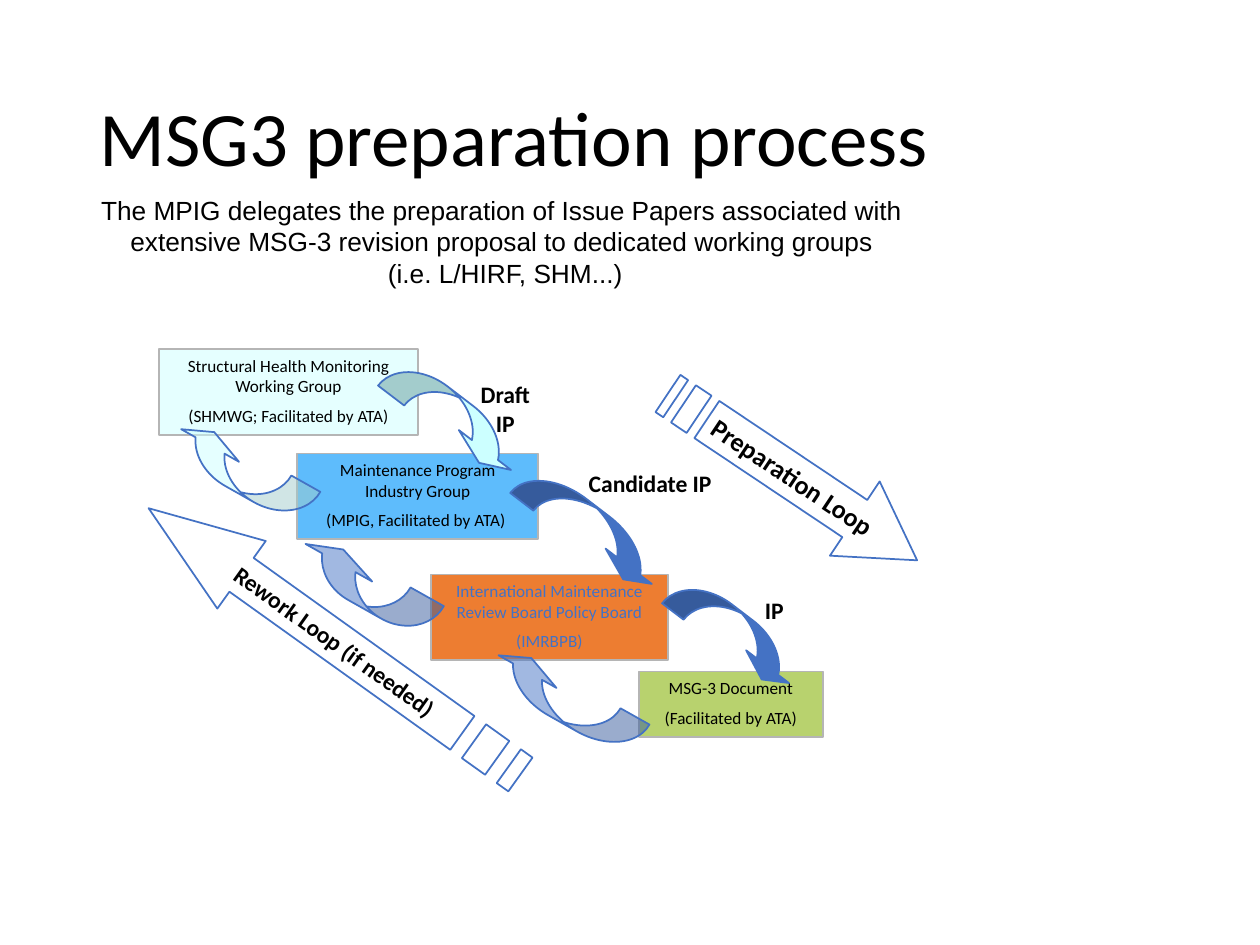
from lxml.etree import SubElement
from pptx import Presentation
from pptx.dml.color import RGBColor
from pptx.enum.shapes import MSO_SHAPE as Shape
from pptx.enum.text import MSO_ANCHOR as Anchor, MSO_AUTO_SIZE as AutoSize, PP_ALIGN as Align
from pptx.oxml.ns import qn
from pptx.util import Inches, Pt

BLACK = RGBColor(0x00, 0x00, 0x00)
BLUE = RGBColor(0x44, 0x72, 0xC4)
SKY = RGBColor(0x5E, 0xBC, 0xFC)
AQUA = RGBColor(0xCC, 0xFF, 0xFF)
ORANGE = RGBColor(0xED, 0x7D, 0x31)
GREEN = RGBColor(0xB8, 0xD2, 0x6E)
GREY = RGBColor(0xB5, 0xB5, 0xB5)

presentation = Presentation()
presentation.slide_width, presentation.slide_height = Inches(10), Inches(7.5)
slide = presentation.slides.add_slide(presentation.slide_layouts[6])
shapes = slide.shapes

# Grid of 100 columns and 75 rows
COLUMN = presentation.slide_width / 100
ROW = presentation.slide_height / 75


def grid(left, top, width, height):
    return [round(n * unit) for n, unit in zip((left, top, width, height), (COLUMN, ROW) * 2)]


def write(shape, lines, size, color=BLACK, bold=False, font="Calibri", align=Align.CENTER,
          gap=0, anchor=Anchor.TOP, wrap=True):
    frame = shape.text_frame
    frame.text = "\n".join(lines)
    frame.word_wrap = wrap
    frame.vertical_anchor = anchor
    frame.auto_size = AutoSize.NONE
    for index, paragraph in enumerate(frame.paragraphs):
        paragraph.alignment = align
        if index and gap:
            paragraph.space_before = Pt(gap)
        for run in paragraph.runs:
            run.font.name, run.font.size = font, Pt(size)
            run.font.bold, run.font.color.rgb = bold, color


# Title and introduction
title = shapes.add_textbox(*grid(6.9, 4, 86.2, 14.5))
write(title, ["MSG3 preparation process"], 44, align=Align.LEFT, anchor=Anchor.MIDDLE)
title.text_frame.paragraphs[0].line_spacing = 0.9

introduction = shapes.add_textbox(*grid(6.7, 14.9, 66.8, 11.1))
write(introduction, [
    "The MPIG delegates the preparation of Issue Papers associated with ",
    "extensive MSG-3 revision proposal to dedicated working groups ",
    "(i.e. L/HIRF, SHM...)",
], 15, font="Arial", wrap=False)

# Group boxes: place, fill, opacity in percent, text colour, lines
boxes = [
    ((34.2, 45.6, 18.8, 6.8), ORANGE, 100, BLUE,
     ["International Maintenance Review Board Policy Board", "(IMRBPB)"]),
    ((23.6, 36, 19.1, 6.8), SKY, 100, BLACK,
     ["Maintenance Program Industry Group", "(MPIG, Facilitated by ATA) "]),
    ((12.6, 27.7, 20.6, 6.8), AQUA, 50, BLACK,
     ["Structural Health Monitoring Working Group", "(SHMWG; Facilitated by ATA)"]),
    ((50.7, 53.3, 14.6, 5.2), GREEN, 100, BLACK,
     ["MSG-3 Document", "(Facilitated by ATA)"]),
]
# Curved arrows: left, top, width, rotation, bend, fill, opacity in percent
FORWARD, BACK = 37.4, 209.4
curves = [
    (29.7, 31.5, 12.7, FORWARD, 0.79, AQUA, 100),
    (40.1, 40.3, 13.6, FORWARD, 0.7, BLUE, 100),
    (52.3, 48.6, 12.1, FORWARD, 0.65, BLUE, 100),
    (38.2, 54, 13.4, BACK, 0.8, BLUE, 50),
    (13.1, 35.8, 12.3, BACK, 0.8, AQUA, 50),
    (23, 44.9, 12.2, BACK, 0.92, BLUE, 50),
]
painted = []
for place, fill, opacity, color, lines in boxes:
    box = shapes.add_shape(Shape.RECTANGLE, *grid(*place))
    write(box, lines, 9.8, color, gap=4.9)
    painted.append((box, fill, opacity, GREY))
for left, top, width, rotation, bend, fill, opacity in curves:
    curve = shapes.add_shape(Shape.CURVED_DOWN_ARROW, *grid(left, top, width, 3.3))
    curve.rotation = rotation
    for index, value in enumerate((bend, 2 * bend, 0.33)):
        curve.adjustments[index] = value
    painted.append((curve, fill, opacity, BLUE))
for shape, fill, opacity, outline in painted:
    shape.shadow.inherit = False
    shape.fill.solid()
    shape.fill.fore_color.rgb = fill
    shape.line.color.rgb, shape.line.width = outline, Pt(1)
    if opacity < 100:
        fill_color = shape.element.spPr.find(qn("a:solidFill"))[0]
        SubElement(fill_color, qn("a:alpha"), val=str(opacity * 1000))

# Paper labels
for place, label in [
    ((36.4, 29.7, 7.4, 5.6), "Draft IP"),
    ((45.5, 36.7, 12.2, 3.3), "Candidate IP"),
    ((53.8, 46.8, 15.3, 3.3), "IP"),
]:
    write(shapes.add_textbox(*grid(*place)), [label], 13.5, bold=True)

# Striped loop arrows, outlined in 32nds of the length and quarters of the height
ARROW_PARTS = [
    [(24, 0), (24, 1), (5, 1), (5, 3), (24, 3), (24, 4), (32, 2)],
    [(2, 1), (4, 1), (4, 3), (2, 3)],
    [(0, 1), (1, 1), (1, 3), (0, 3)],
]
for place, rotation, text_turn, label, size in [
    ((8.4, 47.6, 36.3, 6.6), 215.6, 180, "Rework Loop (if needed)", 13.5),
    ((51, 34.3, 23.8, 7.1), 33.8, 0, "Preparation Loop", 15),
]:
    left, top, width, height = grid(*place)
    outlines = [[(left + x * width / 32, top + y * height / 4) for x, y in part]
                for part in ARROW_PARTS]
    builder = shapes.build_freeform(*outlines[0][0])
    for outline in outlines:
        builder.move_to(*outline[0])
        builder.add_line_segments(outline[1:], close=True)
    arrow = builder.convert_to_shape()
    arrow.rotation = rotation
    arrow.shadow.inherit = False
    arrow.fill.background()
    arrow.line.color.rgb, arrow.line.width = BLUE, Pt(1)
    write(arrow, [label], size, bold=True, anchor=Anchor.MIDDLE, wrap=False)
    if text_turn:
        arrow.text_frame._txBody.bodyPr.set("rot", str(text_turn * 60000))

presentation.save("out.pptx")
